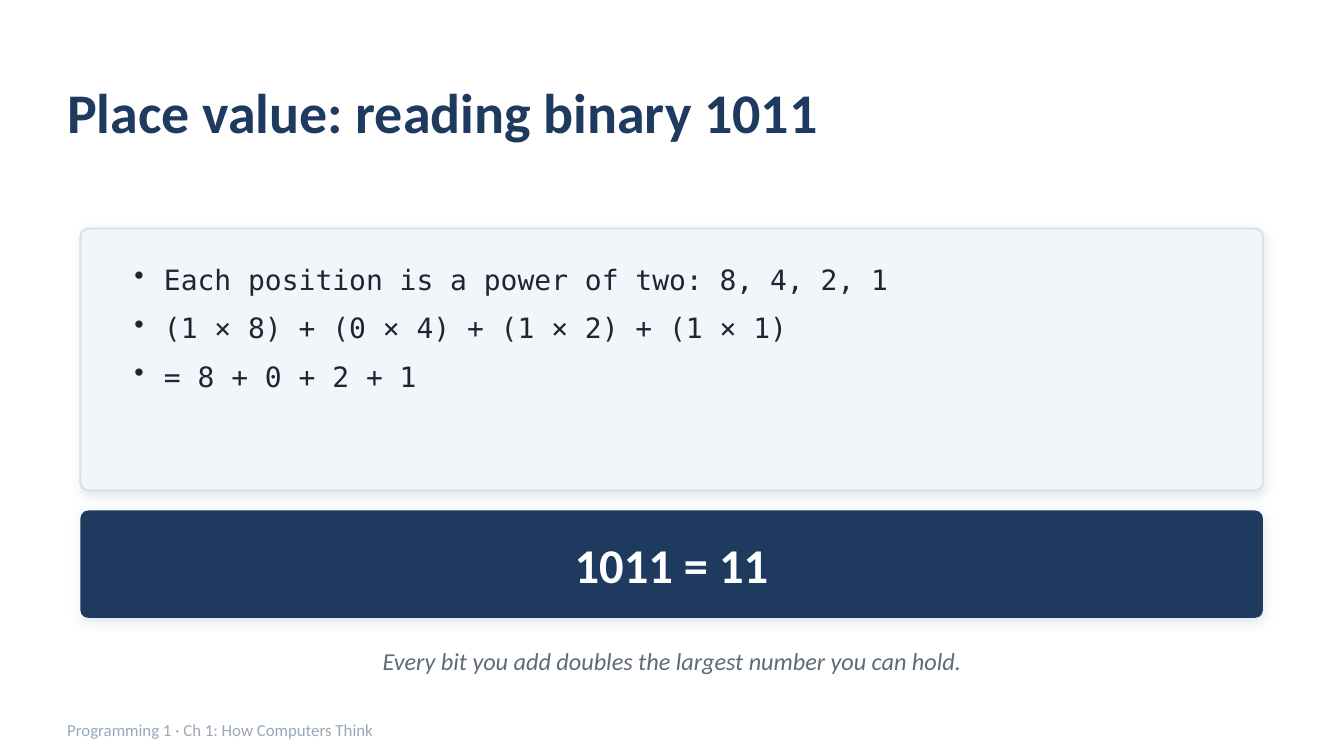
from lxml import etree
from pptx import Presentation
from pptx import util as u
from pptx.dml.color import RGBColor
from pptx.enum import shapes, text
from pptx.oxml import parse_xml
from pptx.oxml.ns import nsdecls, qn

NAVY, GREY = "1F3A5F", "9AA8B6"
CARD_LEFT, CARD_WIDTH = 1.52, 22.35
SHADOW = f"""<a:effectLst {nsdecls("a")}>
<a:outerShdw blurRad="{u.Pt(6)}" dist="{u.Pt(2)}" dir="5400000" algn="ctr" rotWithShape="0">
<a:srgbClr val="{GREY}"><a:alpha val="28000"/></a:srgbClr>
</a:outerShdw></a:effectLst>"""


def rgb(value):
    return RGBColor.from_string(value)


def box(left, top, width, height):
    return [u.Cm(v) for v in (left, top, width, height)]


def set_attrs(obj, values):
    for name, value in values.items():
        setattr(obj, name, value)


def write(p, words, size, color, font="Calibri", **styles):
    r = p.add_run()
    r.text = words
    set_attrs(r.font, dict(name=font, size=u.Pt(size), **styles))
    r.font.color.rgb = rgb(color)


def add_line(sp, words, size, color, align=text.PP_ALIGN.LEFT, **styles):
    tf = sp.text_frame
    set_attrs(tf, dict(word_wrap=True, auto_size=text.MSO_AUTO_SIZE.NONE,
                       vertical_anchor=text.MSO_ANCHOR.MIDDLE,
                       margin_left=0, margin_top=0, margin_right=0, margin_bottom=0))
    p = tf.paragraphs[0]
    p.alignment = align
    write(p, words, size, color, **styles)


def add_title(s, words):
    sp = s.shapes.title
    set_attrs(sp, dict(zip(("left", "top", "width", "height"),
                           box(1.27, 1.02, 22.86, 2.16))))
    add_line(sp, words, 30, NAVY, bold=True)


def add_text(s, place, *args, **styles):
    add_line(s.shapes.add_textbox(*box(*place)), *args, **styles)


def add_card(s, top, height, fill, line=None):
    sp = s.shapes.add_shape(shapes.MSO_SHAPE.ROUNDED_RECTANGLE,
                            *box(CARD_LEFT, top, CARD_WIDTH, height))
    sp.adjustments[0] = 0.15 / height
    sp.fill.solid()
    sp.fill.fore_color.rgb = rgb(fill)
    if line:
        sp.line.color.rgb = rgb(line)
        sp.line.width = u.Pt(1)
    else:
        sp.line.fill.background()
    sp._element.spPr.append(parse_xml(SHADOW))


def add_bullets(s, place, items):
    tf = s.shapes.add_textbox(*box(*place)).text_frame
    tf.word_wrap = True
    indent = u.Cm(0.56)
    for i, item in enumerate(items):
        p = tf.add_paragraph() if i else tf.paragraphs[0]
        pPr = p._p.get_or_add_pPr()
        pPr.set("marL", str(indent))
        pPr.set("indent", str(-indent))
        etree.SubElement(pPr, qn("a:buChar"), char="•")
        p.space_after = u.Pt(8)
        write(p, item, 15, "1B2733", font="DejaVu Sans Mono")


def main():
    prs = Presentation()
    set_attrs(prs, dict(slide_width=u.Cm(25.4), slide_height=u.Cm(14.29)))
    s = prs.slides.add_slide(prs.slide_layouts[5])
    center = text.PP_ALIGN.CENTER

    add_title(s, "Place value: reading binary 1011")
    add_card(s, 4.32, 4.95, "F2F5F9", "D8E0E9")
    add_bullets(s, (2.29, 4.83, 20.83, 4.06), [
        "Each position is a power of two: 8, 4, 2, 1",
        "(1 × 8) + (0 × 4) + (1 × 2) + (1 × 1)",
        "= 8 + 0 + 2 + 1",
    ])
    add_card(s, 9.65, 2.03, NAVY)
    add_text(s, (CARD_LEFT, 9.73, CARD_WIDTH, 1.88),
             "1011 = 11", 26, "FFFFFF", center, bold=True)
    add_text(s, (CARD_LEFT, 11.99, CARD_WIDTH, 1.02),
             "Every bit you add doubles the largest number you can hold.",
             13, "5E6B79", center, italic=True)
    add_text(s, (1.27, 13.46, 20.32, 0.66),
             "Programming 1 · Ch 1: How Computers Think", 9, GREY)
    prs.save("out.pptx")


if __name__ == "__main__":
    main()
